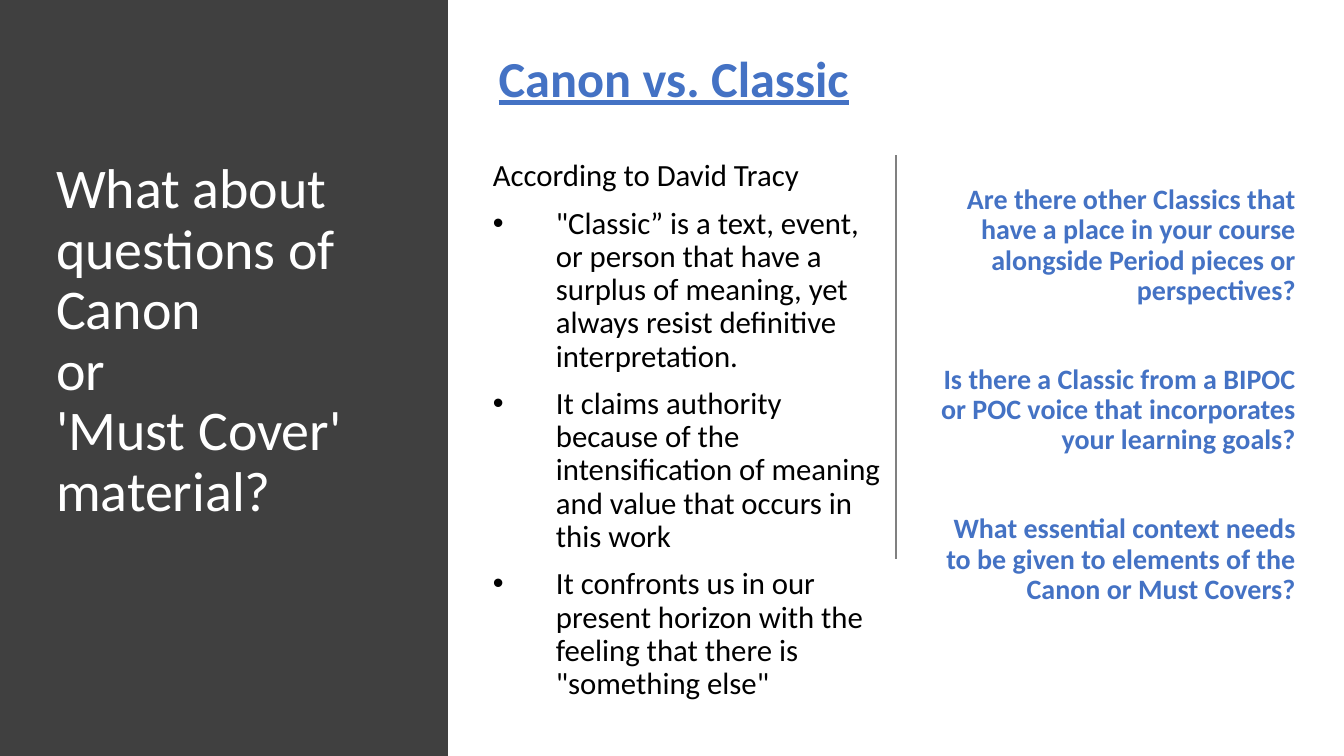
from lxml.etree import SubElement
from pptx import Presentation
from pptx.dml.color import RGBColor as RGB
from pptx.enum.shapes import MSO_CONNECTOR as Connector, MSO_SHAPE as Shape
from pptx.enum.text import MSO_ANCHOR as Anchor, PP_ALIGN as Align
from pptx.oxml.ns import qn
from pptx.util import Pt

QUESTION = "What about questions of \vCanon\vor \v'Must Cover'\vmaterial?"
HEADING = "Canon vs. Classic"
INTRO = "According to David Tracy"
CLAIMS = [
    "\"Classic” is a text, event, or person that have a surplus of meaning, yet always resist definitive interpretation.",
    "It claims authority because of the intensification of meaning and value that occurs in this work",
    "It confronts us in our present horizon with the feeling that there is \"something else\"",
]
PROMPTS = [
    "Are there other Classics that have a place in your course alongside Period pieces or perspectives?",
    "Is there a Classic from a BIPOC or POC voice that incorporates your learning goals?",
    "What essential context needs to be given to elements of the Canon or Must Covers?",
]

THEME = {
    "font": "Calibri",
    "panel": RGB(0x40, 0x40, 0x40),
    "rule": RGB(0x80, 0x80, 0x80),
    "question": {"size": Pt(40), "color": RGB(255, 255, 255)},
    "heading": {"size": Pt(36), "color": RGB(0x44, 0x72, 0xC4), "bold": True, "underline": True},
    "claim": {"size": Pt(22), "color": RGB(0, 0, 0)},
    "prompt": {"size": Pt(20), "color": RGB(0x44, 0x72, 0xC4), "bold": True},
}
PAGE_WIDTH, PAGE_HEIGHT = 960, 540
PANEL_WIDTH = 320
TOP = 111
RULE_X, RULE_HEIGHT = 640, 288
BULLET_INDENT = 45
CLAIM_GAP, PROMPT_GAP = 10, 42


def add_text(page, bounds, lines, style, gap=0, spacing=0.9, align=Align.LEFT, anchor=Anchor.TOP):
    """Add a wrapped text box with one paragraph per line and return its paragraphs."""
    box = page.shapes.add_textbox(*map(Pt, bounds))
    frame = box.text_frame
    frame.word_wrap = True
    frame.vertical_anchor = anchor
    for index, line in enumerate(lines):
        para = frame.add_paragraph() if index else frame.paragraphs[0]
        para.text = line
        layout = {"alignment": align, "line_spacing": spacing, "space_before": Pt(gap if index else 0)}
        for name, value in layout.items():
            setattr(para, name, value)
        for span in para.runs:
            span.font.name = THEME["font"]
            for name, value in THEME[style].items():
                if name == "color":
                    span.font.color.rgb = value
                else:
                    setattr(span.font, name, value)
    return frame.paragraphs


def add_bullet(para):
    props = para._p.get_or_add_pPr()
    props.set("marL", str(Pt(BULLET_INDENT)))
    props.set("indent", str(-Pt(BULLET_INDENT)))
    SubElement(props, qn("a:buFont"), typeface="Arial")
    SubElement(props, qn("a:buChar"), char="•")


def add_panel(page):
    panel = page.shapes.add_shape(Shape.RECTANGLE, 0, 0, Pt(PANEL_WIDTH), Pt(PAGE_HEIGHT))
    panel.shadow.inherit = False
    panel.fill.solid()
    panel.fill.fore_color.rgb = THEME["panel"]
    panel.line.fill.background()


def add_rule(page):
    rule = page.shapes.add_connector(
        Connector.STRAIGHT, Pt(RULE_X), Pt(TOP), Pt(RULE_X), Pt(TOP + RULE_HEIGHT))
    rule.line.color.rgb = THEME["rule"]
    rule.line.width = Pt(1)
    SubElement(rule._element.spPr, qn("a:effectLst"))


def main():
    deck = Presentation()
    deck.slide_width, deck.slide_height = Pt(PAGE_WIDTH), Pt(PAGE_HEIGHT)
    page = deck.slides.add_slide(deck.slide_layouts[6])
    add_panel(page)
    add_text(page, (33, TOP, 261, 343), [QUESTION], "question")
    claims = add_text(page, (345, TOP, 291, 399), [INTRO, *CLAIMS], "claim", gap=CLAIM_GAP)
    for para in claims[1:]:
        add_bullet(para)
    add_rule(page)
    add_text(page, (662, TOP, 270.5, 343), PROMPTS, "prompt",
             gap=PROMPT_GAP, align=Align.RIGHT, anchor=Anchor.MIDDLE)
    add_text(page, (349, 30, 309, 51), [HEADING], "heading", spacing=1.0)
    deck.save("out.pptx")


if __name__ == "__main__":
    main()
